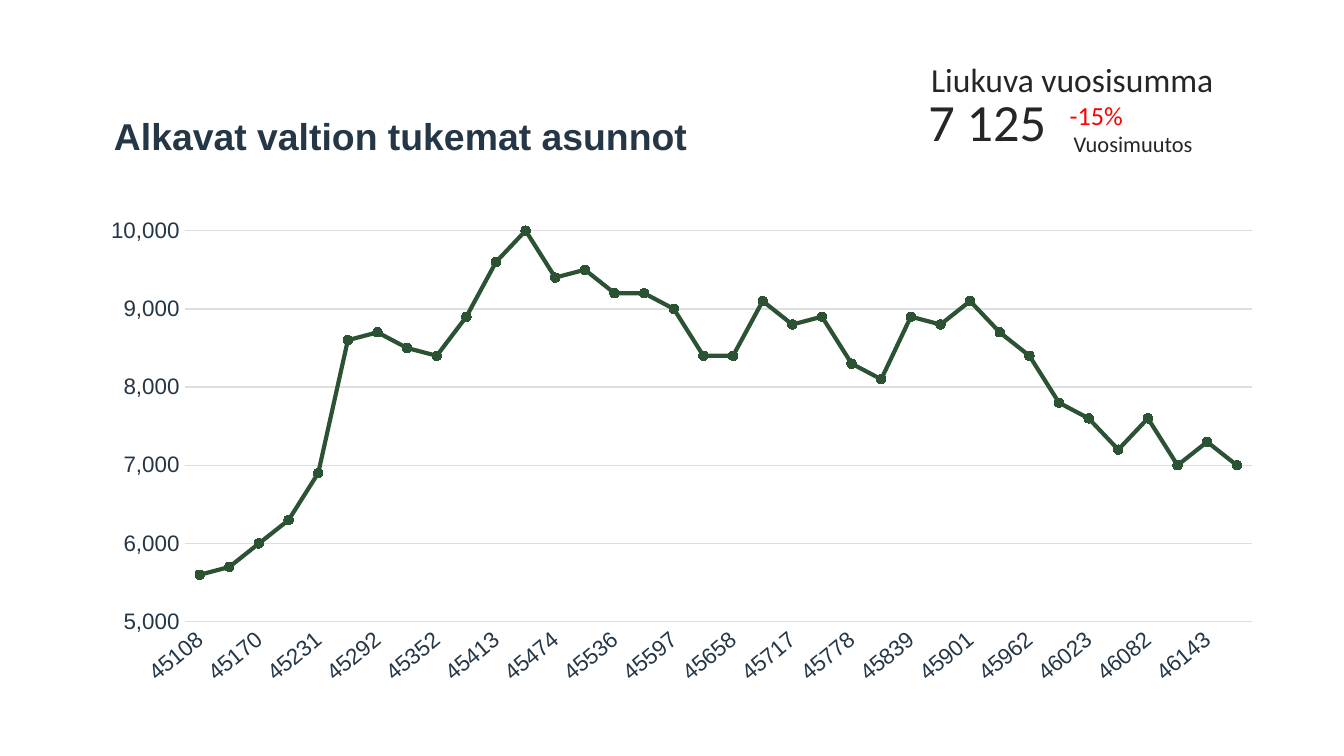
from lxml.etree import SubElement
from pptx import Presentation
from pptx.chart.data import CategoryChartData
from pptx.dml.color import RGBColor
from pptx.enum.chart import XL_CHART_TYPE, XL_MARKER_STYLE, XL_TICK_MARK
from pptx.enum.text import MSO_ANCHOR, MSO_AUTO_SIZE
from pptx.oxml import parse_xml
from pptx.oxml.ns import nsdecls, qn
from pptx.util import Pt

NAVY = RGBColor(0x25, 0x37, 0x46)
INK = RGBColor(0x26, 0x26, 0x26)
RED = RGBColor(0xFF, 0x00, 0x00)
GREEN = RGBColor(0x2C, 0x52, 0x34)
GRID = RGBColor(0xDE, 0xDE, 0xDE)

TITLE = "Alkavat valtion tukemat asunnot"
TITLE_BOX = (54, 59.04, 374.4, 27.36)
KEY_FIGURES = [
    ("Vuosimuutos", (568.08, 66.24, 90.72, 21.6), 12, INK, MSO_ANCHOR.TOP),
    ("Liukuva vuosisumma", (491.76, 28.08, 174.24, 28.8), 18, INK, MSO_ANCHOR.TOP),
    ("-15%", (565.92, 49.68, 117.36, 23.76), 14, RED, MSO_ANCHOR.BOTTOM),
    ("7 125", (490.32, 43.92, 158.4, 41.04), 28, INK, MSO_ANCHOR.BOTTOM),
]
CHART_BOX = (48.24, 111.6, 635.04, 260.64)
PLOT_LAYOUT = {"x": 0.08, "y": 0.03, "w": 0.9, "h": 0.82}
MONTHS = [
    45108, 45139, 45170, 45200, 45231, 45261, 45292, 45323, 45352,
    45383, 45413, 45444, 45474, 45505, 45536, 45566, 45597, 45627,
    45658, 45689, 45717, 45748, 45778, 45809, 45839, 45870, 45901,
    45931, 45962, 45992, 46023, 46054, 46082, 46113, 46143, 46174,
]
HOMES = [
    5600, 5700, 6000, 6300, 6900, 8600, 8700, 8500, 8400,
    8900, 9600, 10000, 9400, 9500, 9200, 9200, 9000, 8400,
    8400, 9100, 8800, 8900, 8300, 8100, 8900, 8800, 9100,
    8700, 8400, 7800, 7600, 7200, 7600, 7000, 7300, 7000,
]


def add_label(slide, text, box, size, color, anchor, font="Calibri",
              bold=False, fit=MSO_AUTO_SIZE.SHAPE_TO_FIT_TEXT):
    frame = slide.shapes.add_textbox(*map(Pt, box)).text_frame
    frame.word_wrap = True
    frame.auto_size = fit
    frame.vertical_anchor = anchor
    run = frame.paragraphs[0].add_run()
    run.text = text
    run.font.name = font
    run.font.size = Pt(size)
    run.font.bold = bold
    run.font.color.rgb = color


def style_axis(axis):
    axis.major_tick_mark = XL_TICK_MARK.NONE
    axis.minor_tick_mark = XL_TICK_MARK.NONE
    axis.format.line.fill.background()
    font = axis.tick_labels.font
    font.name = "Arial"
    font.size = Pt(12)
    font.color.rgb = NAVY


def set_plot_layout(chart):
    plot_area = chart.plots[0]._element.getparent()
    for old in plot_area.findall(qn("c:layout")):
        plot_area.remove(old)
    layout = parse_xml(f"<c:layout {nsdecls('c')}/>")
    manual = SubElement(layout, qn("c:manualLayout"))
    settings = {"layoutTarget": "inner", "xMode": "edge", "yMode": "edge", **PLOT_LAYOUT}
    for tag, value in settings.items():
        SubElement(manual, qn(f"c:{tag}")).set("val", str(value))
    plot_area.insert(0, layout)


def add_homes_chart(slide):
    data = CategoryChartData(number_format="#,##0")
    data.categories = [str(month) for month in MONTHS]
    data.add_series("Series 1", HOMES)
    chart = slide.shapes.add_chart(
        XL_CHART_TYPE.LINE_MARKERS, *map(Pt, CHART_BOX), data).chart
    chart.has_legend = False
    chart.has_title = False
    chart.font.name = "DejaVu Sans"
    chart.font.size = Pt(10)
    chart.font.color.rgb = INK
    chart.plots[0].vary_by_categories = False
    set_plot_layout(chart)

    months, homes = chart.category_axis, chart.value_axis
    style_axis(months)
    style_axis(homes)
    months.has_major_gridlines = False
    months._element.find(qn("c:txPr")).find(qn("a:bodyPr")).set("rot", "-2400000")
    skip = parse_xml(f'<c:tickLblSkip {nsdecls("c")} val="2"/>')
    months._element.find(qn("c:noMultiLvlLbl")).addprevious(skip)

    homes.minimum_scale = 5000
    homes.maximum_scale = 10100
    homes.major_unit = 1000
    homes.tick_labels.number_format = "#,##0"
    homes.tick_labels.number_format_is_linked = False
    homes.has_major_gridlines = True
    homes.major_gridlines.format.line.color.rgb = GRID
    homes.major_gridlines.format.line.width = Pt(0.75)

    series = chart.plots[0].series[0]
    series.smooth = False
    series.format.line.color.rgb = GREEN
    series.format.line.width = Pt(2.25)
    series.marker.style = XL_MARKER_STYLE.CIRCLE
    series.marker.size = 5
    series.marker.format.fill.solid()
    series.marker.format.fill.fore_color.rgb = GREEN
    series.marker.format.line.color.rgb = GREEN


def main():
    deck = Presentation()
    deck.slide_width, deck.slide_height = Pt(720), Pt(405)
    slide = deck.slides.add_slide(deck.slide_layouts[6])
    add_label(slide, TITLE, TITLE_BOX, 20, NAVY, MSO_ANCHOR.MIDDLE,
              font="Arial", bold=True, fit=MSO_AUTO_SIZE.NONE)
    add_homes_chart(slide)
    for figure in KEY_FIGURES:
        add_label(slide, *figure)
    deck.save("out.pptx")


if __name__ == "__main__":
    main()
